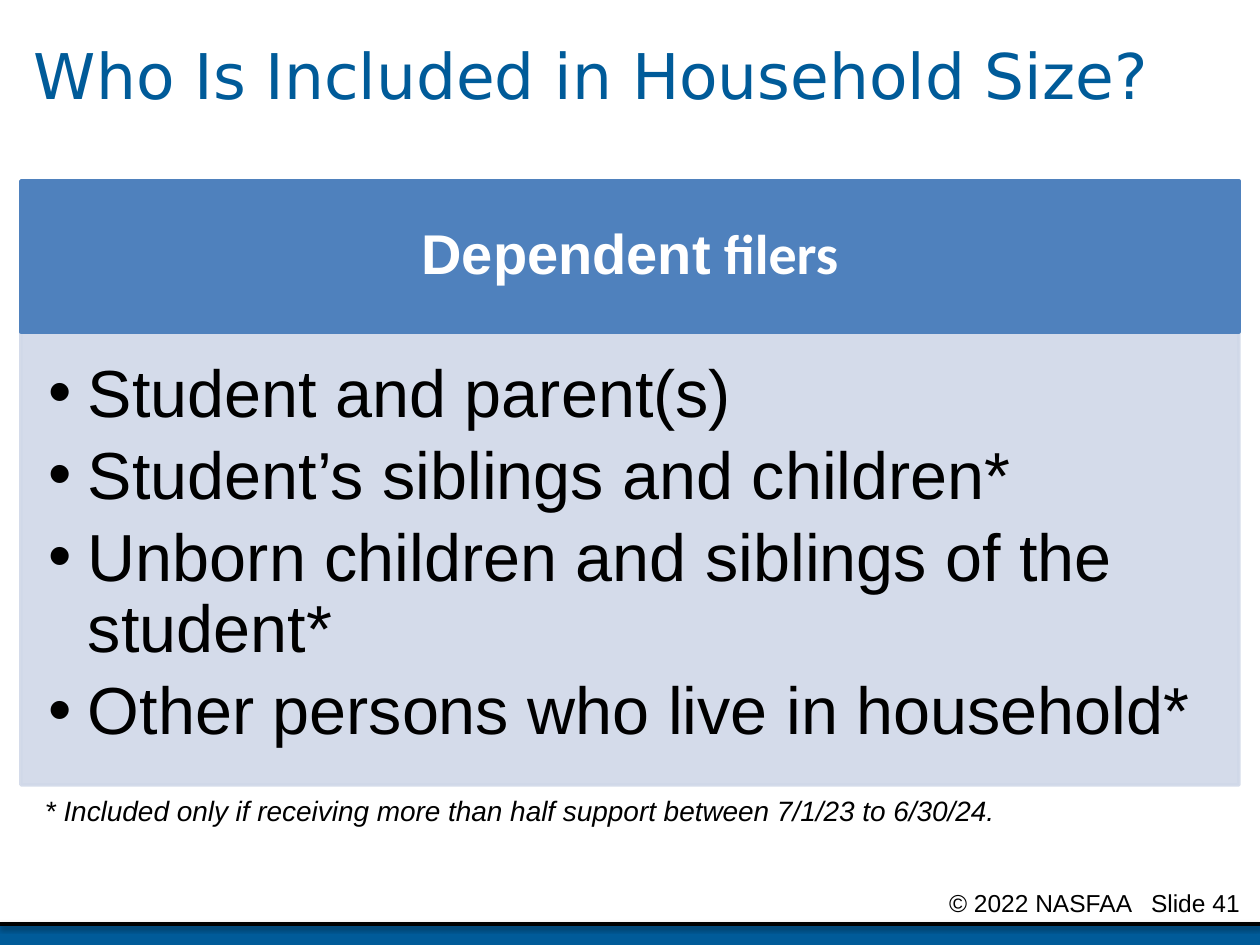
from lxml import etree
from pptx import Presentation
from pptx.dml.color import RGBColor
from pptx.enum.shapes import MSO_CONNECTOR, MSO_SHAPE
from pptx.enum.text import MSO_ANCHOR, MSO_AUTO_SIZE, PP_ALIGN
from pptx.oxml.ns import qn
from pptx.util import Emu, Pt

PX_PER_INCH = 126
SLIDE_W, SLIDE_H = 1260, 945
RECT = MSO_SHAPE.RECTANGLE
STRAIGHT = MSO_CONNECTOR.STRAIGHT
MIDDLE, TOP = MSO_ANCHOR.MIDDLE, MSO_ANCHOR.TOP
LEFT, CENTER = PP_ALIGN.LEFT, PP_ALIGN.CENTER
NO_FIT = MSO_AUTO_SIZE.NONE

NAVY = RGBColor(0x00, 0x5B, 0x99)
BLUE = RGBColor(0x4F, 0x81, 0xBD)
PALE_BLUE = RGBColor(0xD0, 0xD8, 0xE8)
BLACK = RGBColor(0, 0, 0)
WHITE = RGBColor(0xFF, 0xFF, 0xFF)

HOUSEHOLD_MEMBERS = [
    "Student and parent(s)",
    "Student’s siblings and children*",
    "Unborn children and siblings of the student*",
    "Other persons who live in household*",
]


def px(length):
    return Emu(round(length * 914400 / PX_PER_INCH))


def place(shape, box):
    shape.left, shape.top, shape.width, shape.height = map(px, box)


def set_font(font, size, color, name="Arial", bold=False, italic=False):
    font.size, font.name, font.bold, font.italic = Pt(size), name, bold, italic
    font.color.rgb = color


def set_frame(frame, anchor, insets=(13, 6, 13, 6)):
    """Wrap the text; insets are left, top, right, bottom."""
    frame.word_wrap = True
    frame.auto_size = NO_FIT
    frame.vertical_anchor = anchor
    (frame.margin_left, frame.margin_top,
     frame.margin_right, frame.margin_bottom) = map(px, insets)


def add_child(parent, tag, **attributes):
    return etree.SubElement(parent, qn(tag), attributes)


def paint(shape, color, alpha=None):
    """Give fill and outline one colour, with alpha in percent."""
    shape.fill.solid()
    shape.fill.fore_color.rgb = color
    shape.line.color.rgb = color
    shape.line.width = Pt(2)
    if alpha is not None:
        for rgb in shape._element.spPr.iter(qn("a:srgbClr")):
            add_child(rgb, "a:alpha", val=str(alpha * 1000))


def add_text(slide, box, text, size, italic=False, insets=(13, 6, 13, 6)):
    text_box = slide.shapes.add_textbox(*map(px, box))
    set_frame(text_box.text_frame, TOP, insets)
    paragraph = text_box.text_frame.paragraphs[0]
    paragraph.text = text
    set_font(paragraph.font, size, BLACK, italic=italic)
    return paragraph


def add_footer(slide, box):
    left, top, width, height = box
    bar = slide.shapes.add_shape(RECT, *map(px, box))
    bar.shadow.inherit = False
    bar.fill.solid()
    bar.fill.fore_color.rgb = NAVY
    bar.line.fill.background()

    rule = slide.shapes.add_connector(
        STRAIGHT, px(left), px(top), px(left + width), px(top))
    rule.line.color.rgb = BLACK
    rule.line.width = Pt(2)
    effects = add_child(rule._element.spPr, "a:effectLst")
    shadow = add_child(effects, "a:outerShdw", blurRad="40000", dist="20000",
                       dir="5400000", rotWithShape="0")
    shadow_color = add_child(shadow, "a:srgbClr", val=str(BLACK))
    add_child(shadow_color, "a:alpha", val="38000")

    credit = add_text(slide, (left + 949, top - 42, 311, 32), "", 14,
                      insets=(0, 6, 0, 6))
    tabs = add_child(credit._p.get_or_add_pPr(), "a:tabLst")
    add_child(tabs, "a:tab", pos=str(px(202)), algn="l")
    credit.text = "© 2022 NASFAA\tSlide 41"
    set_font(credit.font, 14, BLACK)


def fill_title(title, box):
    place(title, box)
    set_frame(title.text_frame, MIDDLE)
    paragraph = title.text_frame.paragraphs[0]
    paragraph.text = "Who Is Included in Household Size?"
    paragraph.alignment = LEFT
    paragraph.line_spacing = 0.9
    set_font(paragraph.font, 36, NAVY, "DejaVu Sans")


def add_filers_panel(slide, members, box, header_height):
    """Stack the heading band on the bulleted list of members."""
    left, top, width, height = box
    header = slide.shapes.add_shape(
        RECT, *map(px, (left, top, width, header_height)))
    header.shadow.inherit = False
    paint(header, BLUE)
    set_frame(header.text_frame, MIDDLE, (32, 18, 32, 18))
    heading = header.text_frame.paragraphs[0]
    heading.alignment = CENTER
    heading.line_spacing = 0.9
    for text, font_name in (("Dependent", "Arial"), (" filers", "Calibri")):
        run = heading.add_run()
        run.text = text
        set_font(run.font, 32, WHITE, font_name, bold=True)

    place(members, (left, top + header_height, width, height - header_height))
    paint(members, PALE_BLUE, alpha=90)
    frame = members.text_frame
    set_frame(frame, TOP, (28, 28, 38, 42))
    frame.text = "\n".join(HOUSEHOLD_MEMBERS)
    for paragraph in frame.paragraphs:
        paragraph.alignment = LEFT
        paragraph.line_spacing = 0.9
        paragraph.space_before = Pt(0)
        paragraph.space_after = Pt(5.7)
        properties = paragraph._p.get_or_add_pPr()
        properties.set("marL", str(px(39)))
        properties.set("indent", str(px(-39)))
        add_child(properties, "a:buFont", typeface="Arial")
        add_child(properties, "a:buChar", char="•")
        set_font(paragraph.font, 38, BLACK)


def main():
    presentation = Presentation()
    presentation.slide_width, presentation.slide_height = px(SLIDE_W), px(SLIDE_H)
    slide = presentation.slides.add_slide(presentation.slide_layouts[1])
    title, members = slide.placeholders

    add_footer(slide, (0, 924, SLIDE_W, 21))
    fill_title(title, (21, 0, 1218, 158))
    add_filers_panel(slide, members, (21, 181, 1218, 604), header_height=151)
    add_text(slide, (32, 788, 1187, 47),
             "* Included only if receiving more than half support "
             "between 7/1/23 to 6/30/24.", 16, italic=True)
    presentation.save("out.pptx")


if __name__ == "__main__":
    main()
